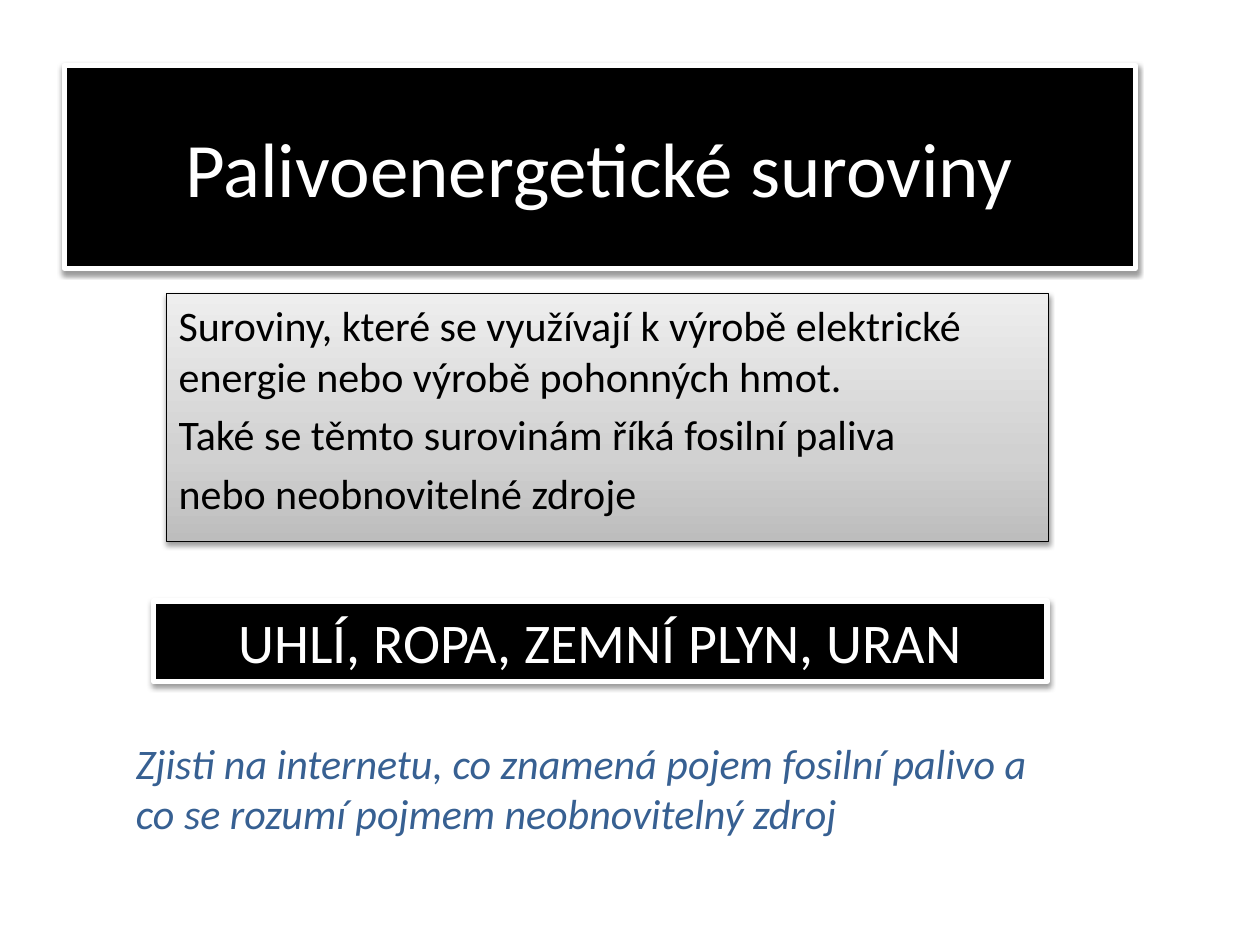
from lxml.etree import SubElement
from pptx import Presentation
from pptx.dml.color import RGBColor
from pptx.enum.shapes import MSO_SHAPE
from pptx.enum.text import MSO_ANCHOR, PP_ALIGN
from pptx.oxml import parse_xml
from pptx.oxml.ns import qn
from pptx.util import Inches, Pt

NAMESPACE = 'xmlns:a="http://schemas.openxmlformats.org/drawingml/2006/main"'


def color(value):
    return RGBColor.from_string(value)


def write(shape, *lines, size=24, ink="000000", italic=False, align=PP_ALIGN.LEFT,
          anchor=MSO_ANCHOR.TOP, before=0, font="Calibri"):
    frame = shape.text_frame
    frame.word_wrap = True
    frame.vertical_anchor = anchor
    for number, line in enumerate(lines):
        paragraph = frame.add_paragraph() if number else frame.paragraphs[0]
        paragraph.alignment = align
        paragraph.space_before = Pt(before)
        run = paragraph.add_run()
        run.text = line
        run.font.name = font
        run.font.size = Pt(size)
        run.font.italic = italic
        run.font.color.rgb = color(ink)


class SlideBuilder:
    """Holds the style and the slide; places are (column, row, columns, rows) of one inch."""

    BLACK, WHITE, BLUE = "000000", "FFFFFF", "376092"
    GRAYS = ((0, "BDBDBD"), (35, "D1D1D1"), (100, "EEEEEE"))

    def __init__(self, presentation):
        self.slide = presentation.slides.add_slide(presentation.slide_layouts[6])

    def panel(self, place, border, border_width):
        shape = self.slide.shapes.add_shape(MSO_SHAPE.RECTANGLE, *map(Inches, place))
        shape.line.color.rgb = color(border)
        shape.line.width = Pt(border_width)
        self.add_shadow(shape)
        return shape

    def black_panel(self, place, text, size):
        shape = self.panel(place, self.WHITE, 3)
        shape.fill.solid()
        shape.fill.fore_color.rgb = color(self.BLACK)
        write(shape, text, size=size, ink=self.WHITE, align=PP_ALIGN.CENTER,
              anchor=MSO_ANCHOR.MIDDLE)

    def gradient_panel(self, place, *lines):
        shape = self.panel(place, self.BLACK, 0.75)
        stops = "".join(f'<a:gs pos="{share * 1000}"><a:srgbClr val="{gray}"/></a:gs>'
                        for share, gray in self.GRAYS)
        gradient = parse_xml(f'<a:gradFill {NAMESPACE}><a:gsLst>{stops}</a:gsLst>'
                             '<a:lin ang="16200000" scaled="1"/></a:gradFill>')
        shape.element.spPr.find(qn("a:prstGeom")).addnext(gradient)
        write(shape, *lines, before=4.8)

    def note(self, place, text):
        box = self.slide.shapes.add_textbox(*map(Inches, place))
        write(box, text, ink=self.BLUE, italic=True)

    def add_shadow(self, shape):
        shape.shadow.inherit = False
        effects = shape.element.spPr.find(qn("a:effectLst"))
        shadow = SubElement(effects, qn("a:outerShdw"), blurRad=str(Pt(3.1)),
                            dist=str(Pt(1.6)), dir="5400000", rotWithShape="0")
        tone = SubElement(shadow, qn("a:srgbClr"), val=self.BLACK)
        SubElement(tone, qn("a:alpha"), val="38000")


def main():
    presentation = Presentation()
    presentation.slide_width, presentation.slide_height = Inches(10), Inches(7.5)
    builder = SlideBuilder(presentation)

    # Title and definition
    builder.black_panel((0.51, 0.52, 8.5, 1.61), "Palivoenergetické suroviny", 44)
    builder.gradient_panel(
        (1.32, 2.33, 7, 1.97),
        "Suroviny, které se využívají k výrobě elektrické energie nebo výrobě pohonných hmot.",
        "Také se těmto surovinám říká fosilní paliva",
        "nebo neobnovitelné zdroje")

    # Task for the pupils and list of raw materials
    builder.note((0.98, 5.8, 7.32, 0.91),
                 "Zjisti na internetu, co znamená pojem fosilní palivo a "
                 "co se rozumí pojmem neobnovitelný zdroj")
    builder.black_panel((1.22, 4.77, 7.09, 0.64), "UHLÍ, ROPA, ZEMNÍ PLYN, URAN", 32)

    presentation.save("out.pptx")


if __name__ == "__main__":
    main()
